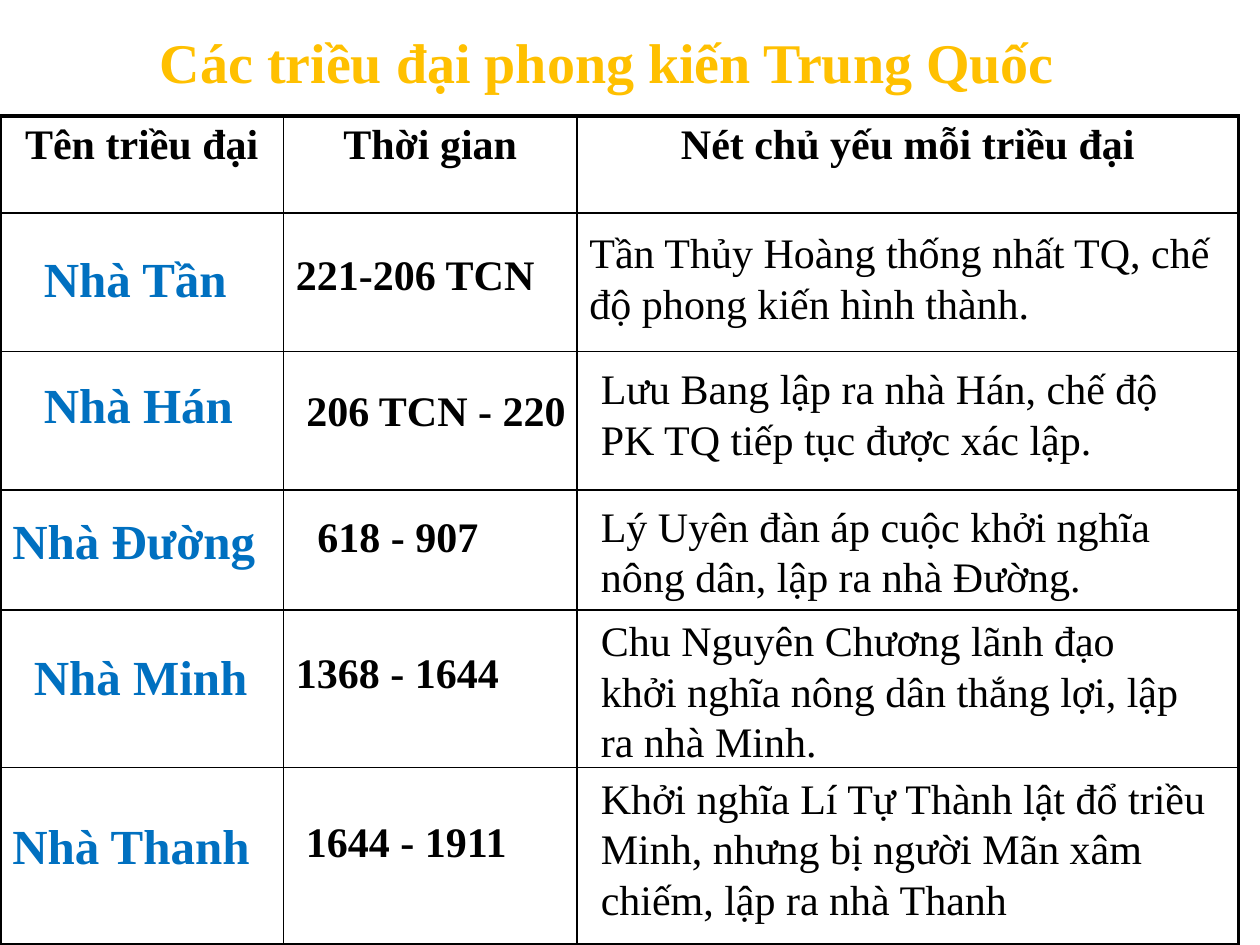
from lxml import etree
from pptx import Presentation
from pptx import util as u
from pptx.dml.color import RGBColor
from pptx.enum import text
from pptx.oxml import ns

BLACK, BLUE, GOLD = "000000", "0070C0", "FFC000"
THIN, THICK = 1, 2.25


def colour(hex_value):
    return RGBColor.from_string(hex_value)


class SlideBuilder:
    font_name = "Times New Roman"

    def __init__(self, slide):
        self.slide = slide

    def style(self, paragraph, size, hex_value, bold, centred):
        paragraph.alignment = text.PP_ALIGN.CENTER if centred else text.PP_ALIGN.LEFT
        for run in paragraph.runs:
            run.font.name = self.font_name
            run.font.size = u.Pt(size)
            run.font.bold = bold
            run.font.color.rgb = colour(hex_value)

    def label(self, words, box, size=24, hex_value=BLACK, bold=True, centred=False):
        frame = self.slide.shapes.add_textbox(*map(u.Inches, box)).text_frame
        frame.word_wrap = True
        frame.auto_size = text.MSO_AUTO_SIZE.SHAPE_TO_FIT_TEXT
        frame.text = words
        self.style(frame.paragraphs[0], size, hex_value, bold, centred)

    def borders(self, cell, widths):
        properties = cell._tc.get_or_add_tcPr()
        for index, (side, width) in enumerate(zip("LRTB", widths)):
            line = etree.Element(ns.qn(f"a:ln{side}"), w=str(u.Pt(width)))
            fill = etree.SubElement(line, ns.qn("a:solidFill"))
            etree.SubElement(fill, ns.qn("a:srgbClr"), val=BLACK)
            properties.insert(index, line)

    def grid(self, left, top, widths, heights, headings):
        table = self.slide.shapes.add_table(
            len(heights), len(widths), u.Inches(left), u.Inches(top),
            u.Inches(sum(widths)), u.Inches(sum(heights))).table
        table.first_row = table.horz_banding = False
        for column, width in zip(table.columns, widths):
            column.width = u.Inches(width)
        last_row, last_column = len(heights) - 1, len(widths) - 1
        for r, height in enumerate(heights):
            table.rows[r].height = u.Inches(height)
            for c in range(len(widths)):
                cell = table.cell(r, c)
                cell.fill.background()
                outer = (c == 0, c == last_column, r == 0, r == last_row)
                self.borders(cell, [THICK if edge else THIN for edge in outer])
        for c, heading in enumerate(headings):
            cell = table.cell(0, c)
            cell.text = heading
            self.style(cell.text_frame.paragraphs[0], 24, BLACK, True, True)


def main():
    deck = Presentation()
    deck.slide_width, deck.slide_height = u.Inches(10), u.Inches(7.5)
    builder = SlideBuilder(deck.slides.add_slide(deck.slide_layouts[6]))

    # Title
    builder.label("Các triều đại phong kiến Trung Quốc", (1.17, 0.17, 7.5, 0.63), 32, GOLD)

    # Table frame with headings
    builder.grid(0, 0.92, [2.25, 2.33, 5.25], [0.77, 1.1, 1.1, 0.95, 1.25, 1.41],
                 ["Tên triều đại", "Thời gian", "Nét chủ yếu mỗi triều đại"])

    # Dynasty names: words, left, top, width
    dynasties = [
        ("Nhà Tần", 0.25, 1.92, 1.92),
        ("Nhà Hán", 0.25, 2.92, 2),
        ("Nhà Đường", 0, 4, 2.42),
        ("Nhà Minh", 0.17, 5.08, 2.08),
        ("Nhà Thanh", 0, 6.42, 2.33),
    ]
    for name, left, top, width in dynasties:
        builder.label(name, (left, top, width, 0.57), 28, BLUE)

    # Periods: words, left, top, width, centred
    periods = [
        ("221-206 TCN", 2.25, 1.92, 2.25, False),
        ("206 TCN - 220", 2.25, 3, 2.42, True),
        ("618 - 907", 2.42, 4, 2, False),
        ("1368 - 1644", 2.25, 5.08, 2.17, False),
        ("1644 - 1911", 2.33, 6.42, 2, False),
    ]
    for period, left, top, width, centred in periods:
        builder.label(period, (left, top, width, 0.5), centred=centred)

    # Main features: words, box
    features = [
        ("Tần Thủy Hoàng thống nhất TQ, chế độ phong kiến hình thành.",
         (4.58, 1.75, 5.25, 0.91)),
        ("Lưu Bang lập ra nhà Hán, chế độ PK TQ tiếp tục được xác lập.",
         (4.67, 2.83, 5.08, 0.91)),
        ("Lý Uyên đàn áp cuộc khởi nghĩa nông dân, lập ra nhà Đường.",
         (4.67, 3.92, 5.08, 0.91)),
        ("Chu Nguyên Chương lãnh đạo khởi nghĩa nông dân thắng lợi, lập ra nhà Minh.",
         (4.67, 4.83, 4.92, 1.31)),
        ("Khởi nghĩa Lí Tự Thành lật đổ triều Minh, nhưng bị người Mãn xâm chiếm, "
         "lập ra nhà Thanh", (4.67, 6.08, 5.08, 1.31)),
    ]
    for feature, box in features:
        builder.label(feature, box, bold=False)

    deck.save("out.pptx")


if __name__ == "__main__":
    main()
